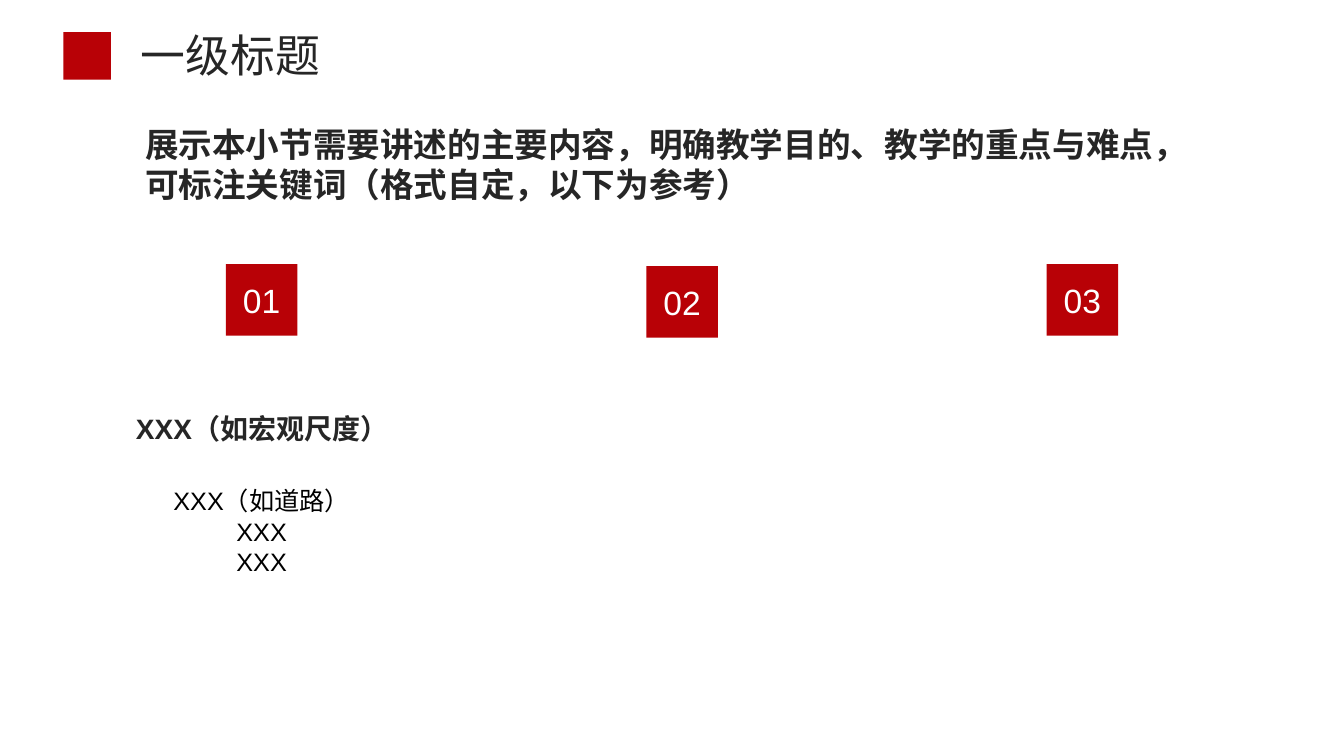
from lxml.etree import SubElement
from pptx import Presentation
from pptx.dml.color import RGBColor
from pptx.enum.shapes import MSO_SHAPE
from pptx.enum.text import MSO_ANCHOR, MSO_AUTO_SIZE, PP_ALIGN
from pptx.oxml.ns import qn
from pptx.util import Inches, Pt

CJK = "Noto Sans CJK SC"
RED = "B80106"
DARK = "262626"


def rgb(value):
    return RGBColor.from_string(value)


class SlideBuilder:
    def __init__(self, prs):
        self.s = prs.slides.add_slide(prs.slide_layouts[6])

    def add_lines(self, tf, lines, size, color, font="Arial", bold=False, align=PP_ALIGN.LEFT):
        formats = {"size": Pt(size), "name": font, "bold": bold}
        for i, line in enumerate(lines):
            p = tf.paragraphs[0] if i == 0 else tf.add_paragraph()
            p.alignment = align
            r = p.add_run()
            r.text = line
            for key, value in formats.items():
                setattr(r.font, key, value)
            r.font.color.rgb = rgb(color)
            SubElement(r._r.get_or_add_rPr(), qn("a:ea"), typeface=CJK)

    def add_text(self, box, lines, size, color, wrap=True, **style):
        tf = self.s.shapes.add_textbox(*map(Inches, box)).text_frame
        tf.word_wrap = wrap
        tf.auto_size = MSO_AUTO_SIZE.SHAPE_TO_FIT_TEXT if wrap else MSO_AUTO_SIZE.NONE
        self.add_lines(tf, lines, size, color, **style)

    def add_square(self, left, top, side, label=None):
        sp = self.s.shapes.add_shape(MSO_SHAPE.RECTANGLE, *map(Inches, (left, top, side, side)))
        sp.shadow.inherit = False
        sp.fill.solid()
        sp.fill.fore_color.rgb = rgb(RED)
        sp.line.fill.background()
        if label:
            tf = sp.text_frame
            tf.vertical_anchor = MSO_ANCHOR.MIDDLE
            self.add_lines(tf, [label], 24, "FFFFFF", align=PP_ALIGN.CENTER)


def main():
    prs = Presentation()
    prs.slide_width, prs.slide_height = Inches(13.33), Inches(7.5)
    slide = SlideBuilder(prs)

    slide.add_text((1.3, 0.23, 7.56, 0.64), ["一级标题"], 32, DARK, font=CJK)
    slide.add_text((1.34, 4.03, 2.52, 1.17), ["XXX（如宏观尺度）"], 20, DARK,
                   wrap=False, bold=True, align=PP_ALIGN.CENTER)
    slide.add_square(0.63, 0.32, 0.47)
    for number, (left, top) in enumerate([(2.24, 2.62), (6.41, 2.64), (10.38, 2.62)], 1):
        slide.add_square(left, top, 0.71, f"{number:02}")
    slide.add_text((1.34, 1.18, 11.43, 2.29),
                   ["展示本小节需要讲述的主要内容，明确教学目的、教学的重点与难点，",
                    "可标注关键词（格式自定，以下为参考）"],
                   24, DARK, wrap=False, bold=True)
    slide.add_text((1.6, 4.77, 1.99, 1.01), ["XXX（如道路）", "XXX", "XXX"], 18, "000000",
                   align=PP_ALIGN.CENTER)

    prs.save("out.pptx")


if __name__ == "__main__":
    main()
